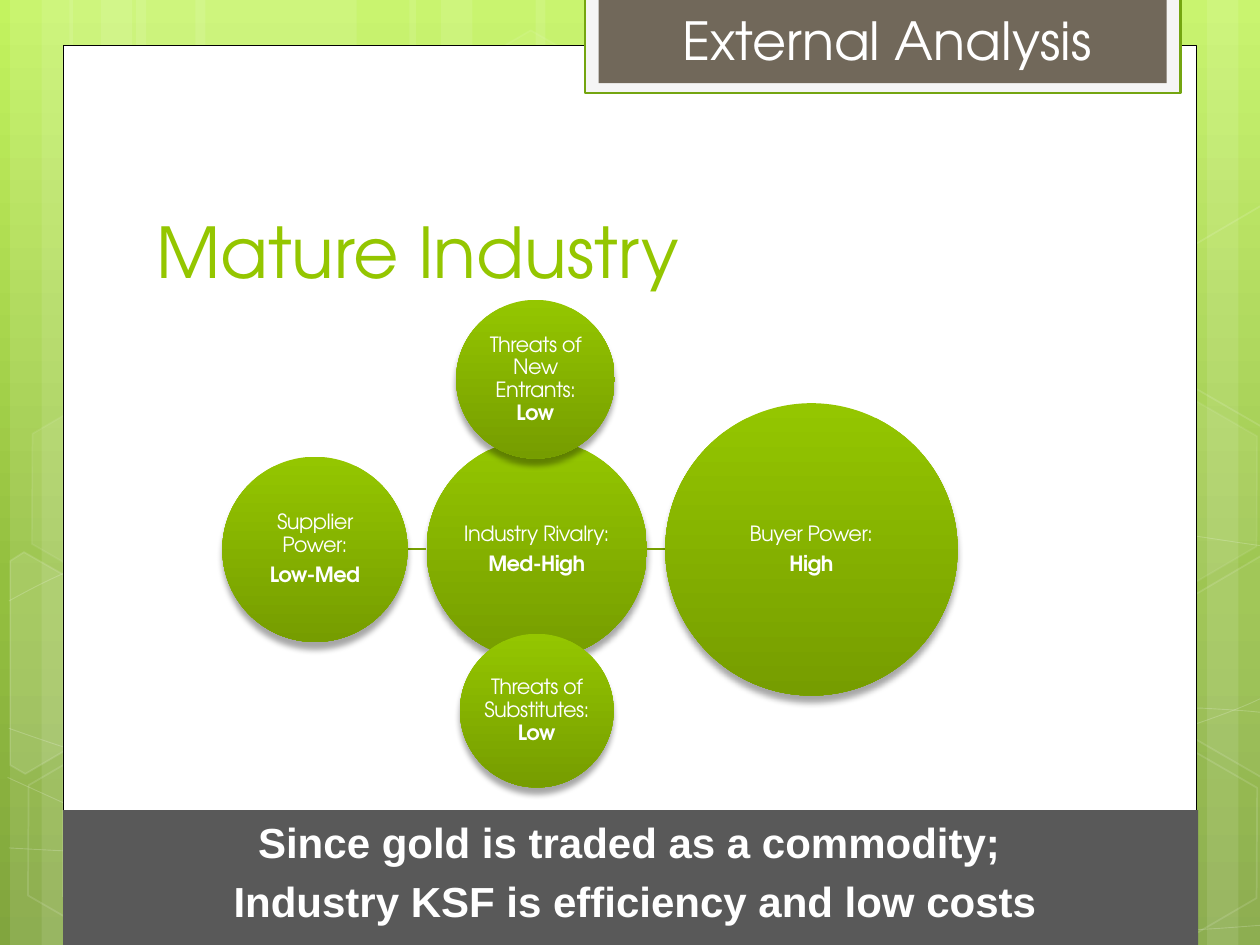
import copy
import math
from dataclasses import dataclass
from typing import Any, NamedTuple

import lxml.etree
import pptx
import pptx.dml.color
import pptx.enum.shapes
import pptx.enum.text
import pptx.oxml.ns
import pptx.util

Inches = pptx.util.Inches
Pt = pptx.util.Pt
qn = pptx.oxml.ns.qn
Kind = pptx.enum.shapes.MSO_SHAPE
Align = pptx.enum.text.PP_ALIGN
Anchor = pptx.enum.text.MSO_ANCHOR


@dataclass(frozen=True)
class Theme:
    white: str = "FFFFFF"
    black: str = "000000"
    lime: str = "94C600"
    moss: str = "769D00"
    link: str = "779F00"
    edge: str = "74A510"
    pale: str = "F5F5F5"
    brown: str = "71685A"
    gray: str = "595959"
    sky: tuple = ((0, "C3F35F"), (0.62, "93BF3F"), (1, "81A53E"))
    face: str = "TeX Gyre Adventor"
    plain: str = "Arial"
    title: float = 40
    tab: float = 30
    note: float = 24
    force: float = 12


class Paint(NamedTuple):
    fill: str | None = None
    line: str | None = None
    width: float = 1
    fill_pct: int = 100
    line_pct: int = 100


class Hex(NamedTuple):
    left: float
    top: float
    fill: int
    line: int


class Shard(NamedTuple):
    x: float
    y: float
    points: list
    fill: int


class Force(NamedTuple):
    x: float
    y: float
    size: float
    label: str
    level: str
    split: bool = True


THEME = Theme()
TILT = 30
STRIPES = [(1.08, 1.75), (0.08, 0.5), (0.33, 0.83), (1.55, 1.75), (0.55, 0.5), (0.8, 0.83),
           (7.33, 1.75), (9.58, 0.5), (9, 0.83), (4.25, 3.08), (3.25, 0.5), (3.5, 0.83)]
CURVES = [
    [(0.07, 6.73), (0.61, 6.76), (1.15, 6.79), (1.9, 6.78), (2.65, 6.77), (3.58, 6.75),
     (4.58, 6.65), (5.58, 6.55), (7, 6.36), (7.92, 6.17), (8.83, 5.98), (9.77, 5.68), (10.07, 5.51)],
    [(0.07, 4.77), (0.36, 4.61), (0.65, 4.46), (1.21, 4.31), (1.78, 4.16), (2.59, 3.94),
     (3.47, 3.87), (4.36, 3.8), (5.44, 3.79), (6.54, 3.87), (7.64, 3.95), (9.47, 4.26), (10.07, 4.34)],
    [(0.06, 6.17), (1.27, 6.72), (2.47, 7.27), (3.34, 7.49)],
    [(0.07, 5.78), (0.38, 5.89), (0.7, 6), (1.28, 6.16), (1.86, 6.31), (2.73, 6.56), (3.57, 6.73),
     (4.4, 6.9), (5.45, 7.08), (6.28, 7.18), (7.11, 7.29), (8, 7.33), (8.53, 7.36),
     (9.05, 7.4), (9.19, 7.38), (9.45, 7.38), (9.71, 7.37), (9.89, 7.35), (10.07, 7.34)],
    [(2.42, 7.49), (2.6, 7.29), (2.78, 7.09), (3.02, 6.91), (3.26, 6.73), (3.6, 6.53), (3.88, 6.39),
     (4.16, 6.25), (4.33, 6.19), (4.7, 6.09), (5.06, 5.99), (5.73, 5.85), (6.08, 5.78),
     (6.44, 5.71), (6.49, 5.71), (6.8, 5.69), (7.11, 5.66), (7.6, 5.63), (7.94, 5.62),
     (8.29, 5.61), (8.86, 5.62), (8.86, 5.62), (9.08, 5.62), (9.31, 5.62), (9.53, 5.62),
     (9.71, 5.63), (9.88, 5.64), (9.97, 5.65), (10.06, 5.66), (10.03, 5.65), (10.06, 5.66)],
]
HEXES = [Hex(3.34, 0.36, 4, 8), Hex(4.97, 5.89, 6, 12), Hex(0.11, 5.91, 0, 12),
         Hex(0.14, 3.12, 7, 8), Hex(1.74, 5.92, 0, 12), Hex(7.53, 4.53, 10, 12),
         Hex(8.34, 5.93, 0, 12), Hex(8.34, 3.14, 7, 8)]
SHARDS = [
    Shard(0.36, 5.35, [(0.08, 4.45), (0.19, 4.38), (0.96, 4.82), (0.95, 5.7), (0.2, 6.14), (0.08, 6.07)], 10),
    Shard(9.85, 5.2, [(9.26, 4.85), (10.01, 4.41), (10.09, 4.46), (10.09, 6.13), (10.02, 6.17), (9.26, 5.73)], 4),
    Shard(9.85, 2.41, [(9.26, 2.07), (10.01, 1.63), (10.1, 1.68), (10.09, 3.35), (10.02, 3.39), (9.26, 2.95)], 0),
]
HUB = Force(4.26, 4.36, 1.75, "Industry Rivalry:", "Med-High")
SPOKES = [Force(4.25, 3.01, 1.26, "Threats of New Entrants: ", "Low", False),
          Force(6.44, 4.36, 2.32, "Buyer Power:", "High"),
          Force(4.26, 5.64, 1.22, "Threats of Substitutes: ", "Low", False),
          Force(2.5, 4.36, 1.47, "Supplier Power:", "Low-Med")]


def apply(thing: Any, **values: Any) -> None:
    for name, value in values.items():
        setattr(thing, name, value)


def color(code: str) -> Any:
    return pptx.dml.color.RGBColor.from_string(code)


def fade(node: Any, pct: int) -> None:
    if pct < 100:
        for tint in node.iter(qn("a:srgbClr")):
            lxml.etree.SubElement(tint, qn("a:alpha"), val=str(pct * 1000))


def coat(shape: Any, paint: Paint) -> Any:
    shape.shadow.inherit = False
    props = shape._element.spPr
    for part, code in ((shape.fill, paint.fill), (shape.line.fill, paint.line)):
        if code:
            part.solid()
            part.fore_color.rgb = color(code)
        else:
            part.background()
    if paint.line:
        shape.line.width = Pt(paint.width)
        fade(props.find(qn("a:ln")), paint.line_pct)
    if paint.fill:
        fade(props.find(qn("a:solidFill")), paint.fill_pct)
    return shape


def blend(fill: Any, stops: tuple) -> None:
    fill.gradient()
    fill.gradient_angle = 270
    first = fill.gradient_stops[0]._gs
    for _ in stops[2:]:
        first.addnext(copy.deepcopy(first))
    for stop, (spot, code) in zip(fill.gradient_stops, stops):
        stop.position = spot
        stop.color.rgb = color(code)


def block(slide: Any, kind: Any, box: tuple, paint: Paint) -> Any:
    return coat(slide.shapes.add_shape(kind, *map(Inches, box)), paint)


def trace(slide: Any, points: list, paint: Paint, close: bool) -> Any:
    dots = [(Inches(x), Inches(y)) for x, y in points]
    pen = slide.shapes.build_freeform(*dots[0])
    pen.add_line_segments(dots[1:], close=close)
    return coat(pen.convert_to_shape(), paint)


def bend(shape: Any) -> None:
    legs = list(shape._element.iter(qn("a:lnTo")))
    for start in range(0, len(legs), 3):
        curve = lxml.etree.Element(qn("a:cubicBezTo"))
        legs[start].addprevious(curve)
        for leg in legs[start:start + 3]:
            curve.append(leg[0])
            leg.getparent().remove(leg)


def turn(shard: Shard) -> list:
    cos, sin = math.cos(math.radians(TILT)), math.sin(math.radians(TILT))
    rays = [(x - shard.x, y - shard.y) for x, y in shard.points]
    return [(shard.x + x * cos + y * sin, shard.y + y * cos - x * sin) for x, y in rays]


def write(para: Any, text: str, code: str, **font: Any) -> Any:
    run = para.add_run()
    run.text = text
    apply(run.font, **font)
    run.font.color.rgb = color(code)
    return run


def indent(para: Any) -> None:
    props = para._p.get_or_add_pPr()
    for name, value in {"marL": str(Inches(0.07)), "indent": "0"}.items():
        props.set(name, value)
    lxml.etree.SubElement(props, qn("a:buNone"))
    para.alignment = Align.CENTER


def hold(shape: Any, box: tuple, anchor: Any) -> Any:
    apply(shape, **dict(zip(("left", "top", "width", "height"), map(Inches, box))))
    apply(shape.text_frame, word_wrap=True, vertical_anchor=anchor,
          auto_size=pptx.enum.text.MSO_AUTO_SIZE.NONE)
    shape._element.getparent().append(shape._element)
    return shape.text_frame.paragraphs[0]


def join(slide: Any, force: Force) -> None:
    dx, dy = force.x - HUB.x, force.y - HUB.y
    span = math.hypot(dx, dy)
    near, far = HUB.size / 2 / span, 1 - force.size / 2 / span
    ends = [Inches(v) for t in (near, far) for v in (HUB.x + dx * t, HUB.y + dy * t)]
    line = slide.shapes.add_connector(pptx.enum.shapes.MSO_CONNECTOR.STRAIGHT, *ends)
    line.line.color.rgb = color(THEME.link)
    line.line.width = Pt(1.25)
    lxml.etree.SubElement(line._element.spPr, qn("a:effectLst"))


def orb(slide: Any, force: Force) -> None:
    half = force.size / 2
    shape = block(slide, Kind.OVAL, (force.x - half, force.y - half, force.size, force.size), Paint())
    blend(shape.fill, ((0, THEME.lime), (1, THEME.moss)))
    glow = lxml.etree.SubElement(shape._element.spPr.find(qn("a:effectLst")), qn("a:outerShdw"),
                                 blurRad=str(Pt(3.5)), dist=str(Pt(4)), dir="5400000", rotWithShape="0")
    lxml.etree.SubElement(glow, qn("a:srgbClr"), val=THEME.black)
    fade(glow, 34)
    frame = shape.text_frame
    sides = ("left", "top", "right", "bottom")
    apply(frame, word_wrap=True, vertical_anchor=Anchor.MIDDLE,
          **{f"margin_{side}": Inches(0.01) for side in sides})
    para = frame.paragraphs[0]
    for text, bold in ((force.label, False), (force.level, True)):
        if bold and force.split:
            para.space_after = Pt(4.2)
            para = frame.add_paragraph()
        apply(para, alignment=Align.CENTER, line_spacing=0.9)
        run = write(para, text, THEME.white, name=THEME.face, size=Pt(THEME.force), bold=bold)
        run._r.get_or_add_rPr().set("spc", "-30")


def scene(slide: Any) -> None:
    blend(slide.background.fill, THEME.sky)
    for left, width in STRIPES:
        block(slide, Kind.RECTANGLE, (left, 0, width, 7.5), Paint(THEME.white, fill_pct=10))
    for knots in CURVES:
        bend(trace(slide, knots, Paint(None, THEME.white, 0.5, line_pct=20), False))
    for cell in HEXES:
        paint = Paint(THEME.white if cell.fill else None, THEME.white, 1, cell.fill, cell.line)
        shape = block(slide, Kind.HEXAGON, (cell.left, cell.top, 1.75, 1.52), paint)
        shape.rotation = TILT
        shape.adjustments[0] = 0.285
    for shard in SHARDS:
        paint = Paint(THEME.white if shard.fill else None, THEME.white, 1, shard.fill, 12)
        trace(slide, turn(shard), paint, True).rotation = TILT
    for box, paint in (((0.5, 0.36, 9, 6.76), Paint(THEME.white, THEME.black, 0.5)),
                       ((4.64, -0.02, 4.73, 0.76), Paint(THEME.pale, THEME.edge, 1.25)),
                       ((4.75, -0.02, 4.51, 0.68), Paint(THEME.brown))):
        block(slide, Kind.RECTANGLE, box, paint)


def main() -> None:
    deck = pptx.Presentation()
    apply(deck, slide_width=Inches(10), slide_height=Inches(7.5))
    slide = deck.slides.add_slide(deck.slide_layouts[1])
    title, body = slide.placeholders
    scene(slide)
    para = hold(title, (1.14, 1.12, 7.68, 1.25), Anchor.BOTTOM)
    para.alignment = Align.LEFT
    write(para, "Mature Industry", THEME.lime, name=THEME.face, size=Pt(THEME.title))
    para = hold(body, (4.75, -0.02, 4.51, 0.66), Anchor.MIDDLE)
    indent(para)
    para.space_before = Pt(0)
    write(para, "External Analysis", THEME.white, name=THEME.face, size=Pt(THEME.tab))
    orb(slide, HUB)
    for force in SPOKES:
        join(slide, force)
        orb(slide, force)
    note = block(slide, Kind.RECTANGLE, (0.5, 6.43, 9.01, 1.07), Paint(THEME.gray))
    frame = note.text_frame
    apply(frame, word_wrap=True, vertical_anchor=Anchor.TOP, margin_top=Inches(0.05))
    for row, text in enumerate(("Since gold is traded as a commodity; ",
                                "Industry KSF is efficiency and low costs")):
        para = frame.add_paragraph() if row else frame.paragraphs[0]
        indent(para)
        if row:
            para.space_before = Pt(4.8)
        write(para, text, THEME.white, name=THEME.plain, size=Pt(THEME.note), bold=True)
    deck.save("out.pptx")


if __name__ == "__main__":
    main()
